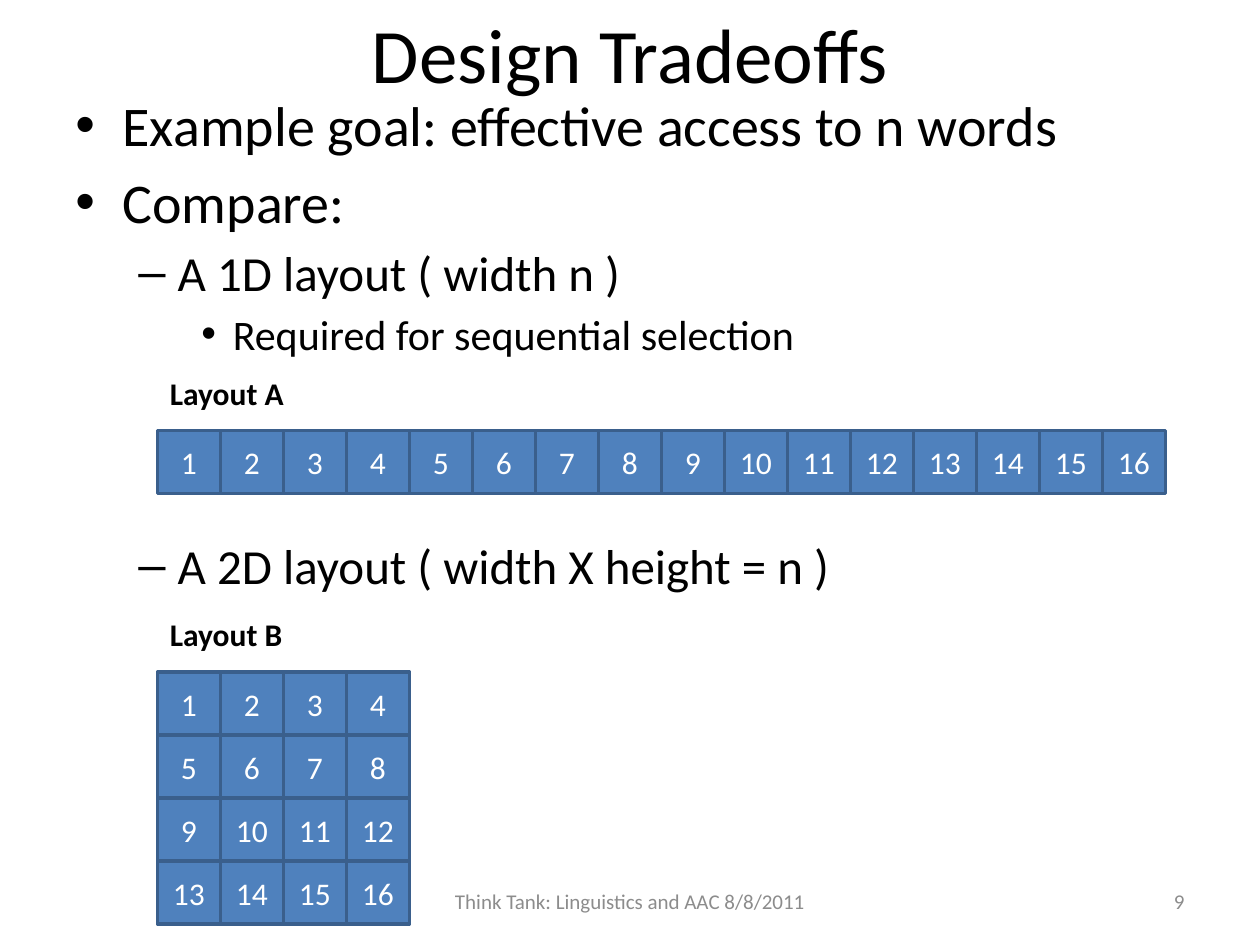
from lxml import etree
from pptx import Presentation
from pptx.dml.color import RGBColor
from pptx.enum.shapes import MSO_SHAPE
from pptx.enum.text import MSO_ANCHOR, PP_ALIGN
from pptx.oxml.ns import qn
from pptx.util import Pt

RECTANGLE = MSO_SHAPE.RECTANGLE
TOP, MIDDLE = MSO_ANCHOR.TOP, MSO_ANCHOR.MIDDLE
LEFT, CENTER, RIGHT = PP_ALIGN.LEFT, PP_ALIGN.CENTER, PP_ALIGN.RIGHT

BLACK = RGBColor(0x00, 0x00, 0x00)
WHITE = RGBColor(0xFF, 0xFF, 0xFF)
GRAY = RGBColor(0x8C, 0x8C, 0x8C)
CELL_FILL = RGBColor(0x4F, 0x81, 0xBD)
CELL_LINE = RGBColor(0x3A, 0x5F, 0x8C)

FONT = "Calibri"
CELL_SIZE = 36
CELL_COUNT = 16
LABEL_RISE = 36

OUTLINE = [
    ("Example goal: effective access to n words", 0, 0),
    ("Compare:", 0, 5.5),
    ("A 1D layout ( width n )", 1, 4.7),
    ("Required for sequential selection", 2, 4),
    ("A 2D layout ( width X height = n )", 1, 101),
]
LEVELS = [("•", 32, 27, 27), ("–", 28, 58.5, 22.5), ("•", 24, 90, 18)]


def write(para, text, size=18, color=BLACK, bold=False, align=LEFT):
    para.alignment = align
    span = para.add_run()
    span.text = text
    span.font.name = FONT
    span.font.size = Pt(size)
    span.font.bold = bold
    span.font.color.rgb = color


def place(shape, left, top, width, height):
    shape.left, shape.top = Pt(left), Pt(top)
    shape.width, shape.height = Pt(width), Pt(height)


def add_text(shapes, bounds, text, anchor=TOP, wrap=True, **style):
    box = shapes.add_textbox(*map(Pt, bounds))
    box.text_frame.word_wrap = wrap
    box.text_frame.vertical_anchor = anchor
    write(box.text_frame.paragraphs[0], text, **style)


def add_title(page, bounds):
    title = page.shapes.title
    place(title, *bounds)
    title.text_frame.vertical_anchor = MIDDLE
    write(title.text_frame.paragraphs[0], "Design Tradeoffs", size=44, align=CENTER)


def set_bullet(para, mark, margin, hanging):
    properties = para._p.get_or_add_pPr()
    properties.set("marL", str(Pt(margin)))
    properties.set("indent", str(-Pt(hanging)))
    etree.SubElement(properties, qn("a:buFont"), typeface="Arial")
    etree.SubElement(properties, qn("a:buChar"), char=mark)


def add_outline(page, bounds):
    frame = page.shapes.add_textbox(*map(Pt, bounds)).text_frame
    frame.word_wrap = True
    for index, (text, level, gap) in enumerate(OUTLINE):
        para = frame.add_paragraph() if index else frame.paragraphs[0]
        mark, size, margin, hanging = LEVELS[level]
        para.level = level
        para.space_before = Pt(gap)
        set_bullet(para, mark, margin, hanging)
        write(para, text, size=size)


def add_cell(shapes, left, top, text):
    cell = shapes.add_shape(RECTANGLE, Pt(left), Pt(top), Pt(CELL_SIZE), Pt(CELL_SIZE))
    cell.shadow.inherit = False
    cell.fill.solid()
    cell.fill.fore_color.rgb = CELL_FILL
    cell.line.color.rgb = CELL_LINE
    cell.line.width = Pt(2)
    cell.text_frame.vertical_anchor = MIDDLE
    write(cell.text_frame.paragraphs[0], text, color=WHITE, align=CENTER)


def add_layout(shapes, left, top, columns, label):
    for index in range(CELL_COUNT):
        row, column = divmod(index, columns)
        add_cell(shapes, left + column * CELL_SIZE, top + row * CELL_SIZE, str(index + 1))
    add_text(shapes, (left, top - LABEL_RISE, 80, 29), label, wrap=False, bold=True)


def add_footer(page, top, height):
    style = {"anchor": MIDDLE, "size": 12, "color": GRAY}
    add_text(page.shapes, (516, top, 168, height), "9", align=RIGHT, **style)
    add_text(page.shapes, (246, top, 228, height),
             "Think Tank: Linguistics and AAC 8/8/2011", align=CENTER, **style)


def main():
    deck = Presentation()
    deck.slide_width, deck.slide_height = Pt(720), Pt(540)
    page = deck.slides.add_slide(deck.slide_layouts[5])
    add_title(page, (36, 0, 648, 60))
    add_outline(page, (36, 48, 648, 356))
    add_layout(page.shapes.add_group_shape().shapes, 90, 246, CELL_COUNT, "Layout A")
    add_layout(page.shapes, 90, 384, 4, "Layout B")
    add_footer(page, 500.5, 28.75)
    deck.save("out.pptx")


if __name__ == "__main__":
    main()
